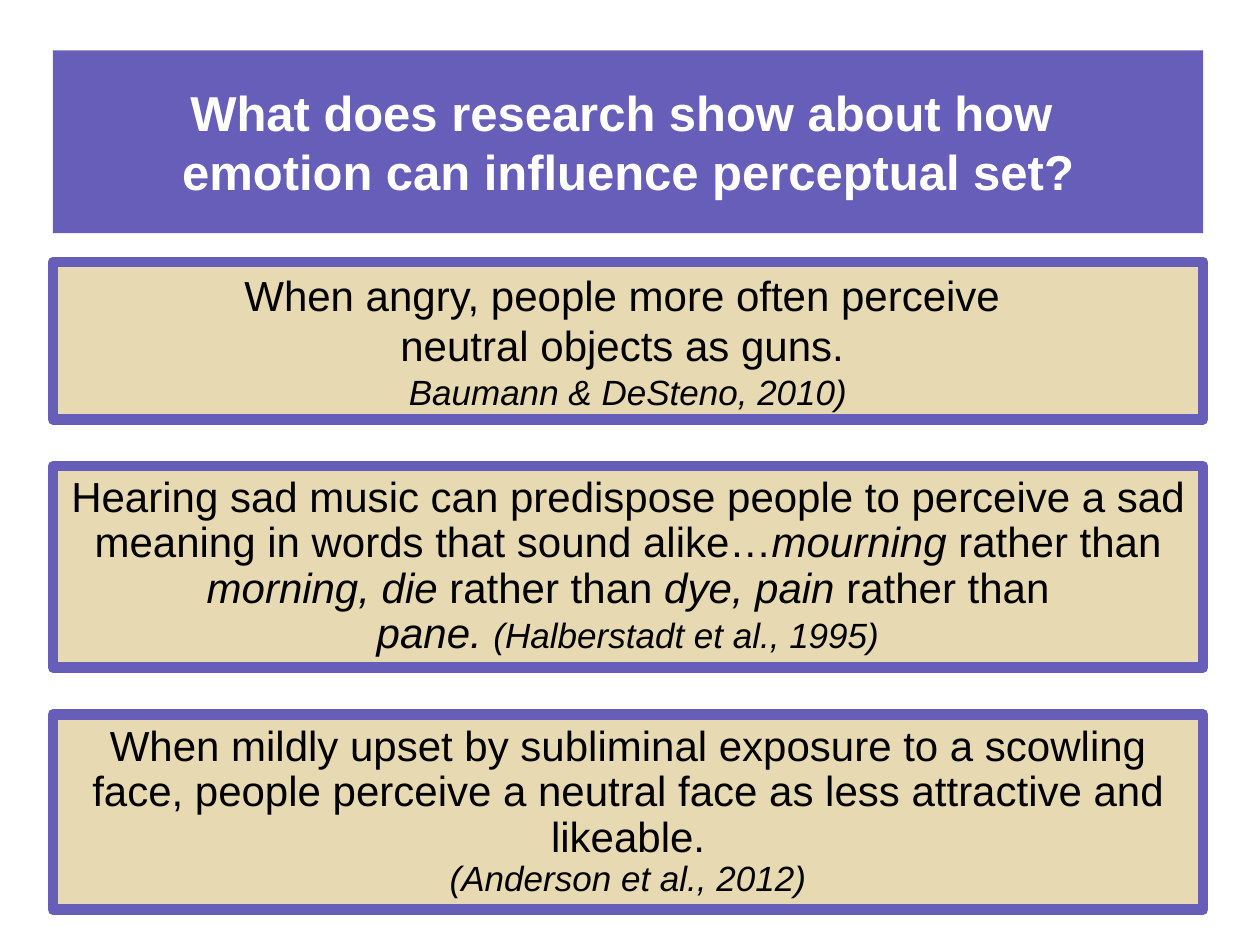
from pptx import Presentation
from pptx.dml.color import RGBColor
from pptx.enum.shapes import MSO_SHAPE as Shape
from pptx.enum.text import MSO_ANCHOR as Anchor, PP_ALIGN as Align
from pptx.util import Inches, Pt

PURPLE, SAND, WHITE, BLACK = "665EB8", "E7D9B1", "FFFFFF", "000000"
WIDTH, HEIGHT = 10, 7.5
LEFT, PANEL_WIDTH = 0.42 / WIDTH, 9.13 / WIDTH
FIRST_TOP, PANEL_GAP = 2.08 / HEIGHT, 0.37 / HEIGHT
BODY, CITATION = 24, 20


def color(value):
    return RGBColor.from_string(value)


class ResearchSlide:
    """Holds the slide and its style; lengths are shares of the slide's size."""

    font = "Arial"

    def __init__(self, presentation):
        self.width = presentation.slide_width
        self.height = presentation.slide_height
        self.slide = presentation.slides.add_slide(presentation.slide_layouts[6])

    def box(self, top, height, fill, border=None):
        shape = self.slide.shapes.add_shape(
            Shape.RECTANGLE, round(LEFT * self.width), round(top * self.height),
            round(PANEL_WIDTH * self.width), round(height * self.height))
        shape.shadow.inherit = False
        shape.fill.solid()
        shape.fill.fore_color.rgb = color(fill)
        if border:
            shape.line.color.rgb = color(border)
            shape.line.width = Pt(6)
        else:
            shape.line.fill.background()
        shape.text_frame.word_wrap = True
        shape.text_frame.vertical_anchor = Anchor.MIDDLE
        return shape

    def format_run(self, run, size, text_color, bold=False, italic=False):
        font = run.font
        font.name, font.size = self.font, Pt(size)
        font.bold, font.italic = bold, italic
        font.color.rgb = color(text_color)

    def title(self, top, height, text):
        shape = self.box(top, height, PURPLE)
        paragraph = shape.text_frame.paragraphs[0]
        paragraph.text = text
        paragraph.alignment = Align.CENTER
        for run in paragraph.runs:
            self.format_run(run, 28, WHITE, bold=True)

    def panel(self, top, height, spacing, paragraphs):
        """Each paragraph is a list of (text, size, italic) runs."""
        text_frame = self.box(top, height, SAND, PURPLE).text_frame
        for index, runs in enumerate(paragraphs):
            paragraph = text_frame.add_paragraph() if index else text_frame.paragraphs[0]
            paragraph.alignment = Align.CENTER
            paragraph.line_spacing = spacing
            for text, size, italic in runs:
                run = paragraph.add_run()
                run.text = text
                self.format_run(run, size, BLACK, italic=italic)


def plain(text):
    return text, BODY, False


def emphasis(text):
    return text, BODY, True


def citation(text):
    return text, CITATION, True


FINDINGS = [
    (1.25, 1.0, [
        [plain("When angry, people more often perceive ")],
        [plain("neutral objects as guns. ")],
        [citation("Baumann & DeSteno, 2010)")],
    ]),
    (1.6, 0.9, [
        [plain("Hearing sad music can predispose people to perceive a sad "
               "meaning in words that sound alike…"),
         emphasis("mourning"), plain(" rather than "),
         emphasis("morning, die "), plain("rather than "),
         emphasis("dye, pain "), plain("rather than")],
        [emphasis("pane. "), citation("(Halberstadt et al., 1995)")],
    ]),
    (1.55, 0.9, [
        [plain("When mildly upset by subliminal exposure to a scowling face, people "
               "perceive a neutral face as less attractive and likeable.")],
        [citation("(Anderson et al., 2012)")],
    ]),
]


def main():
    presentation = Presentation()
    presentation.slide_width = Inches(WIDTH)
    presentation.slide_height = Inches(HEIGHT)
    research = ResearchSlide(presentation)
    research.title(0.4 / HEIGHT, 1.45 / HEIGHT,
                   "What does research show about how \v"
                   "emotion can influence perceptual set?")
    top = FIRST_TOP
    for inches_high, spacing, paragraphs in FINDINGS:
        height = inches_high / HEIGHT
        research.panel(top, height, spacing, paragraphs)
        top += height + PANEL_GAP
    presentation.save("out.pptx")


if __name__ == "__main__":
    main()
